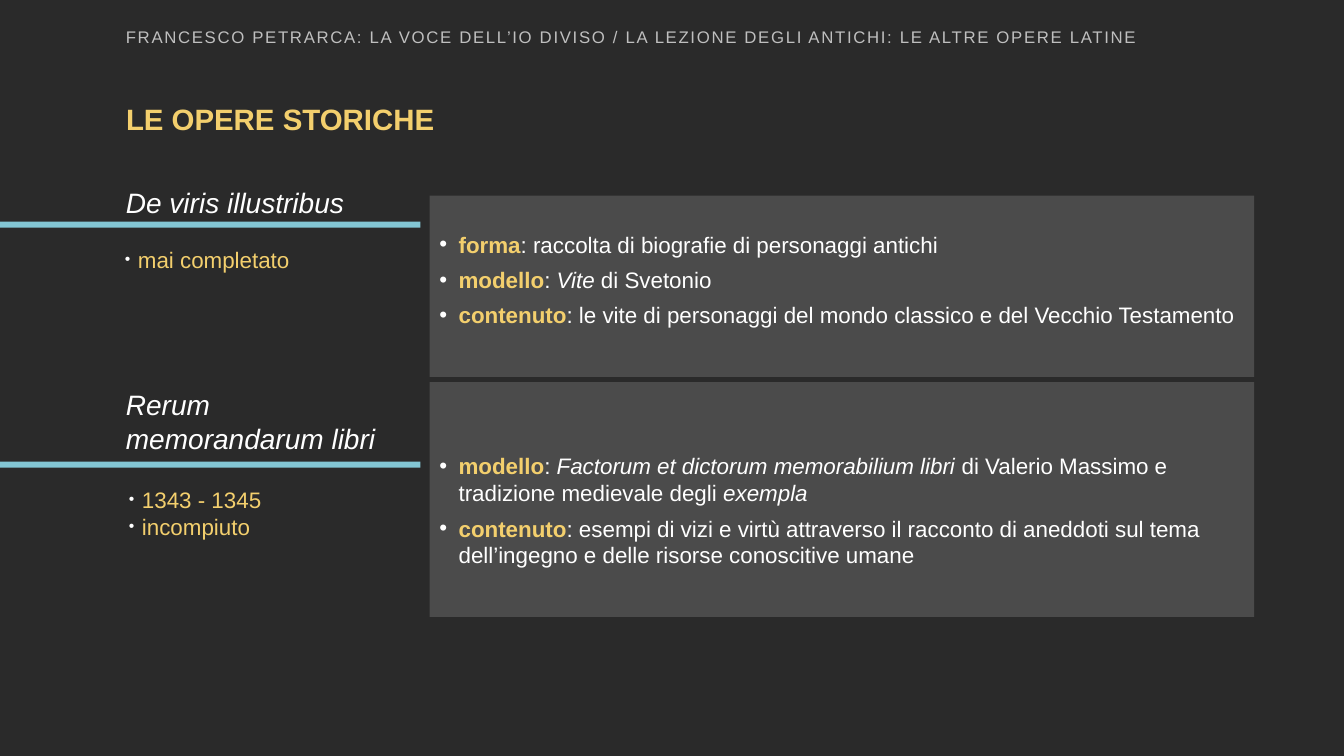
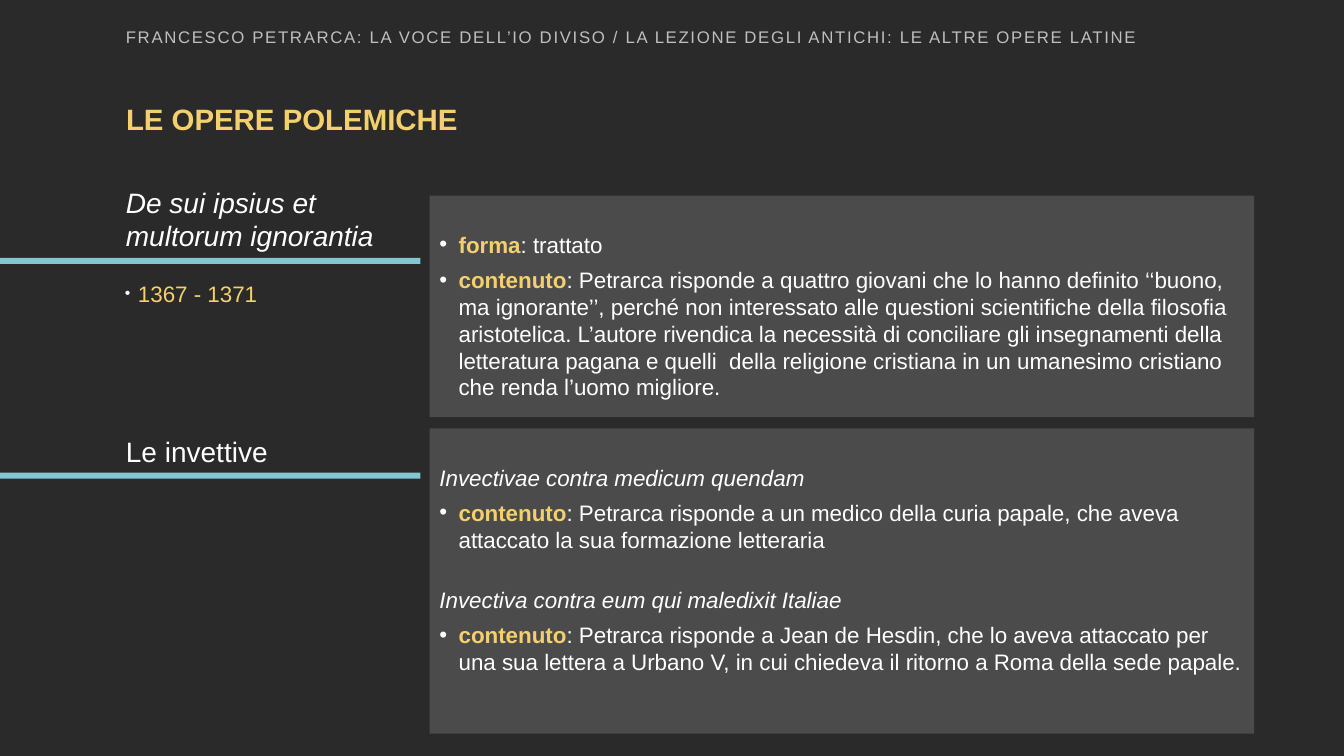
"""Build two slides on Petrarch's historical and polemical Latin works."""
from dataclasses import dataclass

from lxml.etree import SubElement
from pptx import Presentation
from pptx.dml.color import RGBColor
from pptx.enum.shapes import MSO_SHAPE
from pptx.enum.text import MSO_ANCHOR, PP_ALIGN
from pptx.oxml.ns import qn
from pptx.util import Inches, Pt

COLORS = {
    "background": "2A2A2A",
    "accent": "F3CF6D",
    "bar": "83C6D4",
    "panel": "989898",
    "header": "BFBFBF",
    "text": "FFFFFF",
}
FONT = "Arial"
HEADER = "FRANCESCO PETRARCA: LA VOCE DELL’IO DIVISO / LA LEZIONE DEGLI ANTICHI: LE ALTRE OPERE LATINE"
LEFT = 1.15
COLUMN_WIDTH = 3.02
BAR_HEIGHT = 0.06
PANEL_LEFT, PANEL_WIDTH = 4.26, 8.18
PANEL_ALPHA = 30


@dataclass(frozen=True)
class Span:
    text: str
    italic: bool = False


@dataclass(frozen=True)
class Entry:
    spans: tuple[Span, ...]
    label: str = ""
    space_before: float = 6


@dataclass(frozen=True)
class Work:
    heading: str
    heading_top: float
    heading_height: float
    bar_top: float
    panel_top: float
    panel_height: float
    entries: tuple[Entry, ...]
    details: tuple[str, ...] = ()
    details_left: float = 1.11
    details_top: float = 0
    panel_inset: float = 0.35
    italic: bool = True


@dataclass(frozen=True)
class Page:
    title: str
    works: tuple[Work, ...]


PAGES = (
    Page("LE OPERE STORICHE", (
        Work(
            "De viris illustribus", 1.79, 0.44, 2.2, 1.94, 1.8,
            (
                Entry((Span(": raccolta di biografie di personaggi antichi"),), "forma"),
                Entry((Span(": "), Span("Vite", True), Span(" di Svetonio")), "modello"),
                Entry((Span(": le vite di personaggi del mondo classico e del Vecchio Testamento"),),
                      "contenuto"),
            ),
            details=("mai completato",), details_top=2.26,
        ),
        Work(
            "Rerum memorandarum libri", 3.8, 0.77, 4.58, 3.79, 2.33,
            (
                Entry((
                    Span(": "),
                    Span("Factorum et dictorum memorabilium libri ", True),
                    Span("di Valerio Massimo e tradizione medievale degli "),
                    Span("exempla", True),
                ), "modello"),
                Entry((Span(": esempi di vizi e virtù attraverso il racconto di aneddoti sul tema "
                            "dell’ingegno e delle risorse conoscitive umane"),), "contenuto"),
            ),
            details=("1343 - 1345", "incompiuto"), details_left=LEFT, details_top=4.64,
            panel_inset=0.7,
        ),
    )),
    Page("LE OPERE POLEMICHE", (
        Work(
            "De sui ipsius et multorum ignorantia", 1.79, 0.77, 2.56, 1.94, 2.2,
            (
                Entry((Span(": trattato"),), "forma"),
                Entry((Span(": Petrarca risponde a quattro giovani che lo hanno definito ‘‘buono, "
                            "ma ignorante’’, perché non interessato alle questioni scientifiche "
                            "della filosofia aristotelica. L’autore rivendica la necessità di "
                            "conciliare gli insegnamenti della letteratura pagana e quelli  della "
                            "religione cristiana in un umanesimo cristiano che renda l’uomo "
                            "migliore."),), "contenuto"),
            ),
            details=("1367 - 1371",), details_top=2.6,
        ),
        Work(
            "Le invettive", 4.26, 0.44, 4.69, 4.25, 3.03,
            (
                Entry((Span("Invectivae contra medicum quendam", True),)),
                Entry((Span(": Petrarca risponde a un medico della curia papale, che aveva "
                            "attaccato la sua formazione letteraria"),), "contenuto"),
                Entry((Span("Invectiva contra eum qui maledixit Italiae", True),), space_before=24),
                Entry((Span(": Petrarca risponde a Jean de Hesdin, che lo aveva attaccato per una "
                            "sua lettera a Urbano V, in cui chiedeva il ritorno a Roma della sede "
                            "papale."),), "contenuto"),
            ),
            italic=False,
        ),
    )),
)


def color(name: str) -> RGBColor:
    return RGBColor.from_string(COLORS[name])


def set_font(font, size: float, color_name: str, bold: bool = False, italic: bool = False) -> None:
    font.name = FONT
    font.size = Pt(size)
    font.bold = bold
    font.italic = italic
    font.color.rgb = color(color_name)


def add_bullet(para, margin: float, size_percent: int = 100) -> None:
    properties = para._p.get_or_add_pPr()
    properties.set("marL", str(Inches(margin)))
    properties.set("indent", str(-Inches(margin)))
    bullet_color = SubElement(properties, qn("a:buClr"))
    SubElement(bullet_color, qn("a:srgbClr"), val=COLORS["text"])
    SubElement(properties, qn("a:buSzPct"), val=str(size_percent * 1000))
    SubElement(properties, qn("a:buFont"), typeface=FONT)
    SubElement(properties, qn("a:buChar"), char="•")


def add_text_box(slide, left: float, top: float, width: float, height: float):
    box = slide.shapes.add_textbox(Inches(left), Inches(top), Inches(width), Inches(height))
    box.text_frame.word_wrap = True
    return box.text_frame


def add_rectangle(slide, left: float, top: float, width: float, height: float, color_name: str):
    shape = slide.shapes.add_shape(
        MSO_SHAPE.RECTANGLE, Inches(left), Inches(top), Inches(width), Inches(height))
    shape.shadow.inherit = False
    shape.fill.solid()
    shape.fill.fore_color.rgb = color(color_name)
    shape.line.fill.background()
    return shape


def next_paragraph(frame, index: int):
    return frame.add_paragraph() if index else frame.paragraphs[0]


def add_header(slide) -> None:
    frame = add_text_box(slide, LEFT, 0.22, 11.5, 0.3)
    frame.vertical_anchor = MSO_ANCHOR.MIDDLE
    para = frame.paragraphs[0]
    span = para.add_run()
    span.text = HEADER
    set_font(span.font, 12, "header")
    span._r.get_or_add_rPr().set("spc", "120")


def format_title(slide, text: str) -> None:
    title = slide.shapes.title
    title.left, title.top = Inches(LEFT), Inches(0.99)
    title.width, title.height = Inches(11.02), Inches(0.42)
    frame = title.text_frame
    frame.text = text
    frame.vertical_anchor = MSO_ANCHOR.TOP
    para = frame.paragraphs[0]
    para.alignment = PP_ALIGN.LEFT
    para.line_spacing = 0.9
    set_font(para.font, 21, "accent", bold=True)


def add_panel(slide, work: Work) -> None:
    panel = add_rectangle(
        slide, PANEL_LEFT, work.panel_top, PANEL_WIDTH, work.panel_height, "panel")
    fill_color = panel._element.spPr.find(qn("a:solidFill")).find(qn("a:srgbClr"))
    SubElement(fill_color, qn("a:alpha"), val=str(PANEL_ALPHA * 1000))
    frame = panel.text_frame
    frame.word_wrap = True
    frame.vertical_anchor = MSO_ANCHOR.TOP
    frame.margin_top = Inches(work.panel_inset)
    for index, entry in enumerate(work.entries):
        para = next_paragraph(frame, index)
        para.alignment = PP_ALIGN.LEFT
        if index:
            para.space_before = Pt(entry.space_before)
        if entry.label:
            add_bullet(para, 0.19)
            label = para.add_run()
            label.text = entry.label
            label.font.bold = True
            label.font.color.rgb = color("accent")
        set_font(para.font, 16, "text")
        for part in entry.spans:
            span = para.add_run()
            span.text = part.text
            span.font.italic = part.italic


def add_details(slide, work: Work) -> None:
    frame = add_text_box(
        slide, work.details_left, work.details_top, 2.5, 0.23 + 0.27 * len(work.details))
    frame.margin_top = Inches(0.18)
    for index, detail in enumerate(work.details):
        para = next_paragraph(frame, index)
        para.text = detail
        add_bullet(para, 0.16, 70)
        para._p.get_or_add_pPr().set("indent", str(-Inches(0.13)))
        set_font(para.font, 16, "accent")


def add_work(slide, work: Work) -> None:
    add_rectangle(slide, 0, work.bar_top, LEFT + COLUMN_WIDTH, BAR_HEIGHT, "bar")
    frame = add_text_box(slide, LEFT, work.heading_top, COLUMN_WIDTH, work.heading_height)
    para = frame.paragraphs[0]
    para.text = work.heading
    set_font(para.font, 20, "text", italic=work.italic)
    add_panel(slide, work)
    if work.details:
        add_details(slide, work)


def main() -> None:
    deck = Presentation()
    deck.slide_width, deck.slide_height = Inches(13.33), Inches(7.5)
    background = deck.slide_master.background.fill
    background.solid()
    background.fore_color.rgb = color("background")
    for page in PAGES:
        slide = deck.slides.add_slide(deck.slide_layouts.get_by_name("Title Only"))
        format_title(slide, page.title)
        add_header(slide)
        for work in page.works:
            add_work(slide, work)
    deck.save("out.pptx")


if __name__ == "__main__":
    main()
